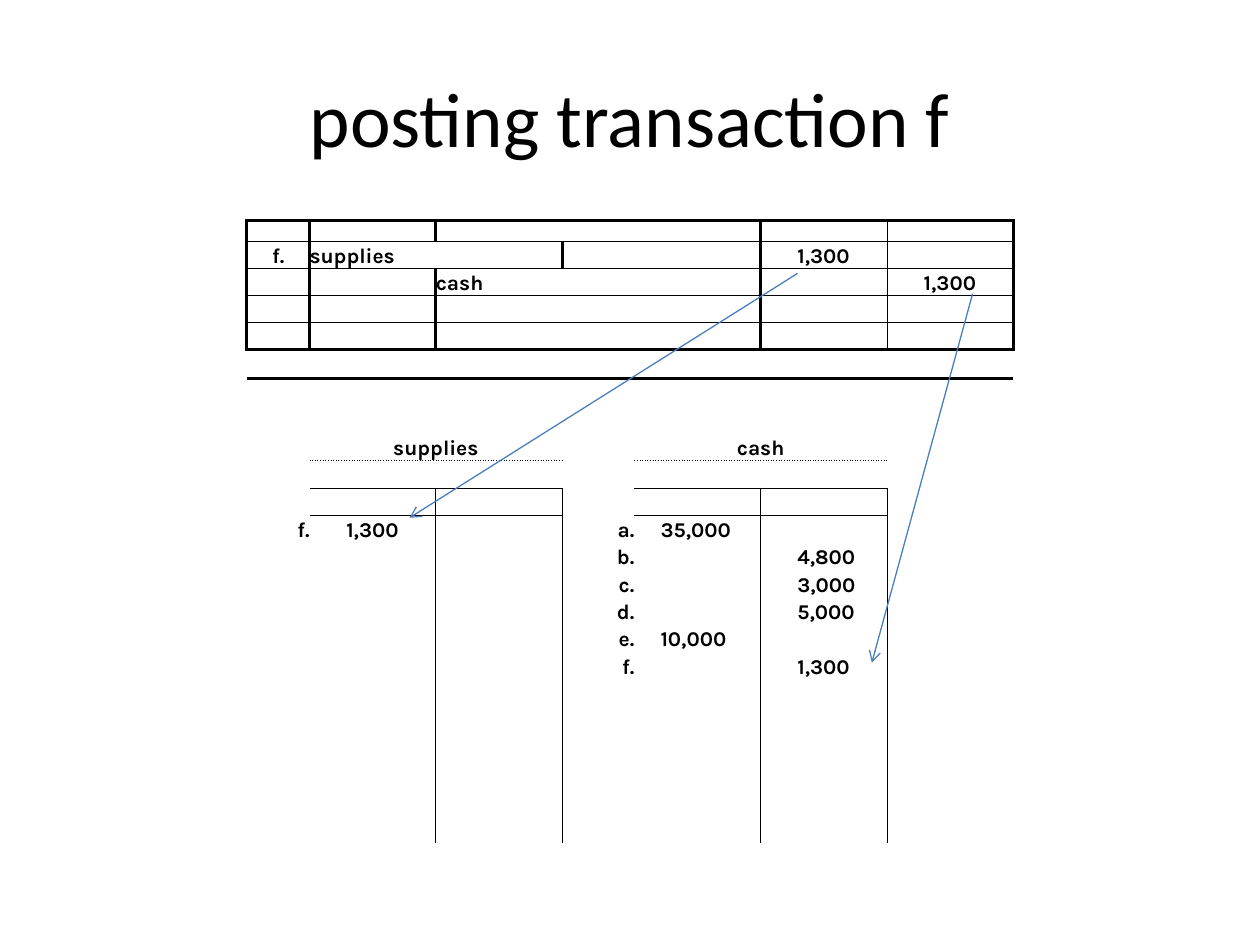
import dataclasses

import pptx
import pptx.dml.color
import pptx.enum.shapes
import pptx.enum.text
import pptx.oxml.ns
import pptx.util
from lxml import etree

Pt = pptx.util.Pt
qn = pptx.oxml.ns.qn
Align = pptx.enum.text.PP_ALIGN
Anchor = pptx.enum.text.MSO_ANCHOR


@dataclasses.dataclass(frozen=True)
class Theme:
    ink: str = "000000"
    arrow: str = "4B7EBC"
    title_font: str = "Calibri"
    body_font: str = "Karla"
    title_size: float = 44
    body_size: float = 12
    empty_size: float = 8
    arrow_width: float = 0.75


@dataclasses.dataclass(frozen=True)
class Box:
    left: float
    top: float
    width: float
    height: float

    def lengths(self):
        return [Pt(value) for value in dataclasses.astuple(self)]


THEME = Theme()
TITLE_BOX = Box(36, 21.6, 648, 90)
LEDGER_BOX = Box(141.1, 126, 438, 356.4)

# Ledger grid: five journal rows, a gap, then two T-accounts
COLUMN_WIDTHS = [35.8, 72.2, 72.2, 41.2, 72.2, 72.2, 72.2]
ROW_HEIGHTS = [12, 15.5, 15.5, 15, 16, 16.5] + [15.64] * 17
JOURNAL_ROWS = 5
HEADING_ROW = 8
BAR_ROW = HEADING_ROW + 2
ENTRY_ROW = BAR_ROW + 1
ACCOUNT_COLUMNS = (1, 4)
NO_STYLE = "{2D5ABB26-0587-4C30-8999-92F81FD0307C}"

# Borders as (width, dash)
HEAVY, THIN, DOTTED = (2, "solid"), (0.5, "solid"), (0.5, "sysDot")

# Left indents of amounts
SHORT_AMOUNT, LONG_AMOUNT = 21, 15


def write(holder, text, *, font=THEME.body_font, size=THEME.body_size, bold=True,
          color=THEME.ink, align=Align.LEFT, anchor=Anchor.BOTTOM, indent=0):
    """Put formatted text in a cell or a shape's text frame."""
    holder.margin_left = Pt(indent)
    holder.vertical_anchor = anchor
    frame = getattr(holder, "text_frame", holder)
    paragraph = frame.paragraphs[0]
    paragraph.alignment = align
    run = paragraph.add_run()
    run.text = text
    run.font.name, run.font.size, run.font.bold = font, Pt(size), bold
    run.font.color.rgb = pptx.dml.color.RGBColor.from_string(color)


def write_amount(cell, amount):
    write(cell, amount, indent=SHORT_AMOUNT if len(amount) < 6 else LONG_AMOUNT)


def line_above(row, column):
    if row in (0, JOURNAL_ROWS):
        return HEAVY
    if row < JOURNAL_ROWS:
        return THIN
    in_account = any(column in (start, start + 1) for start in ACCOUNT_COLUMNS)
    return {HEADING_ROW + 1: DOTTED, BAR_ROW: THIN}.get(row) if in_account else None


def line_before(row, column):
    if row < JOURNAL_ROWS:
        return {0: HEAVY, 1: HEAVY, 5: HEAVY, 6: THIN, 7: HEAVY}.get(column)
    if row >= BAR_ROW and column - 1 in ACCOUNT_COLUMNS:
        return THIN
    return None


def format_cell(cell, row, column):
    """Clear the margins and fill, and draw the borders of one cell."""
    cell.margin_left = cell.margin_right = cell.margin_top = cell.margin_bottom = 0
    borders = {
        "a:lnL": line_before(row, column),
        "a:lnR": line_before(row, column + 1),
        "a:lnT": line_above(row, column),
        "a:lnB": line_above(row + 1, column),
    }
    properties = cell._tc.get_or_add_tcPr()
    for tag, border in borders.items():
        if border:
            width, dash = border
            line = etree.SubElement(properties, qn(tag), w=str(Pt(width)))
            fill = etree.SubElement(line, qn("a:solidFill"))
            etree.SubElement(fill, qn("a:srgbClr"), val=THEME.ink)
            etree.SubElement(line, qn("a:prstDash"), val=dash)
    cell.fill.background()
    # A small type size keeps empty rows from growing
    paragraph = cell.text_frame.paragraphs[0]._p
    etree.SubElement(paragraph, qn("a:endParaRPr"), sz=str(THEME.empty_size * 100))


def add_title(slide, box, text):
    title = slide.shapes.title
    title.left, title.top, title.width, title.height = box.lengths()
    write(title.text_frame, text, font=THEME.title_font, size=THEME.title_size,
          bold=False, align=Align.CENTER, anchor=Anchor.MIDDLE, indent=7.2)


def add_ledger(slide, box):
    frame = slide.shapes.add_table(len(ROW_HEIGHTS), len(COLUMN_WIDTHS), *box.lengths())
    table = frame.table
    table.first_row = table.horz_banding = False
    table._tbl.tblPr.find(qn("a:tableStyleId")).text = NO_STYLE
    for column, width in zip(table.columns, COLUMN_WIDTHS):
        column.width = Pt(width)
    for row_index, height in enumerate(ROW_HEIGHTS):
        table.rows[row_index].height = Pt(height)
        for column_index in range(len(COLUMN_WIDTHS)):
            format_cell(table.cell(row_index, column_index), row_index, column_index)
    return table


def fill_journal(table, row, letter, debit, credit, amount):
    """Write a journal entry: the debit line, then the indented credit line."""
    table.cell(row, 1).merge(table.cell(row, 2))
    write(table.cell(row, 0), letter, align=Align.CENTER)
    write(table.cell(row, 1), debit)
    write_amount(table.cell(row, 5), amount)
    write(table.cell(row + 1, 2), credit)
    write_amount(table.cell(row + 1, 6), amount)


def fill_account(table, column, name, entries):
    """Write a T-account: heading, then letters with debits or credits."""
    heading = table.cell(HEADING_ROW, column)
    heading.merge(table.cell(HEADING_ROW, column + 1))
    write(heading, name, align=Align.CENTER)
    for row, (letter, debit, credit) in enumerate(entries, ENTRY_ROW):
        write(table.cell(row, column - 1), letter, align=Align.RIGHT)
        for side, amount in enumerate((debit, credit)):
            if amount:
                write_amount(table.cell(row, column + side), amount)


def add_posting_arrow(slide, box, start, end):
    points = [Pt(value) for x, y in (start, end) for value in (box.left + x, box.top + y)]
    arrow = slide.shapes.add_connector(pptx.enum.shapes.MSO_CONNECTOR.STRAIGHT, *points)
    arrow.line.color.rgb = pptx.dml.color.RGBColor.from_string(THEME.arrow)
    arrow.line.width = Pt(THEME.arrow_width)
    etree.SubElement(arrow.line._get_or_add_ln(), qn("a:tailEnd"), type="arrow")
    etree.SubElement(arrow._element.spPr, qn("a:effectLst"))


def main():
    presentation = pptx.Presentation()
    presentation.slide_width, presentation.slide_height = Pt(720), Pt(540)
    slide = presentation.slides.add_slide(presentation.slide_layouts[5])

    add_title(slide, TITLE_BOX, "posting transaction f")

    # Journal entry and the two accounts it is posted to
    table = add_ledger(slide, LEDGER_BOX)
    fill_journal(table, 1, "f.", "supplies", "cash", "1,300")
    fill_account(table, ACCOUNT_COLUMNS[0], "supplies", [("f.", "1,300", "")])
    fill_account(table, ACCOUNT_COLUMNS[1], "cash", [
        ("a.", "35,000", ""),
        ("b.", "", "4,800"),
        ("c.", "", "3,000"),
        ("d.", "", "5,000"),
        ("e.", "10,000", ""),
        ("f.", "", "1,300"),
    ])

    # Arrows from journal amounts to account entries
    add_posting_arrow(slide, LEDGER_BOX, (314.7, 30.2), (92.9, 169.9))
    add_posting_arrow(slide, LEDGER_BOX, (414.7, 41.8), (357.1, 252.7))

    presentation.save("out.pptx")


if __name__ == "__main__":
    main()
